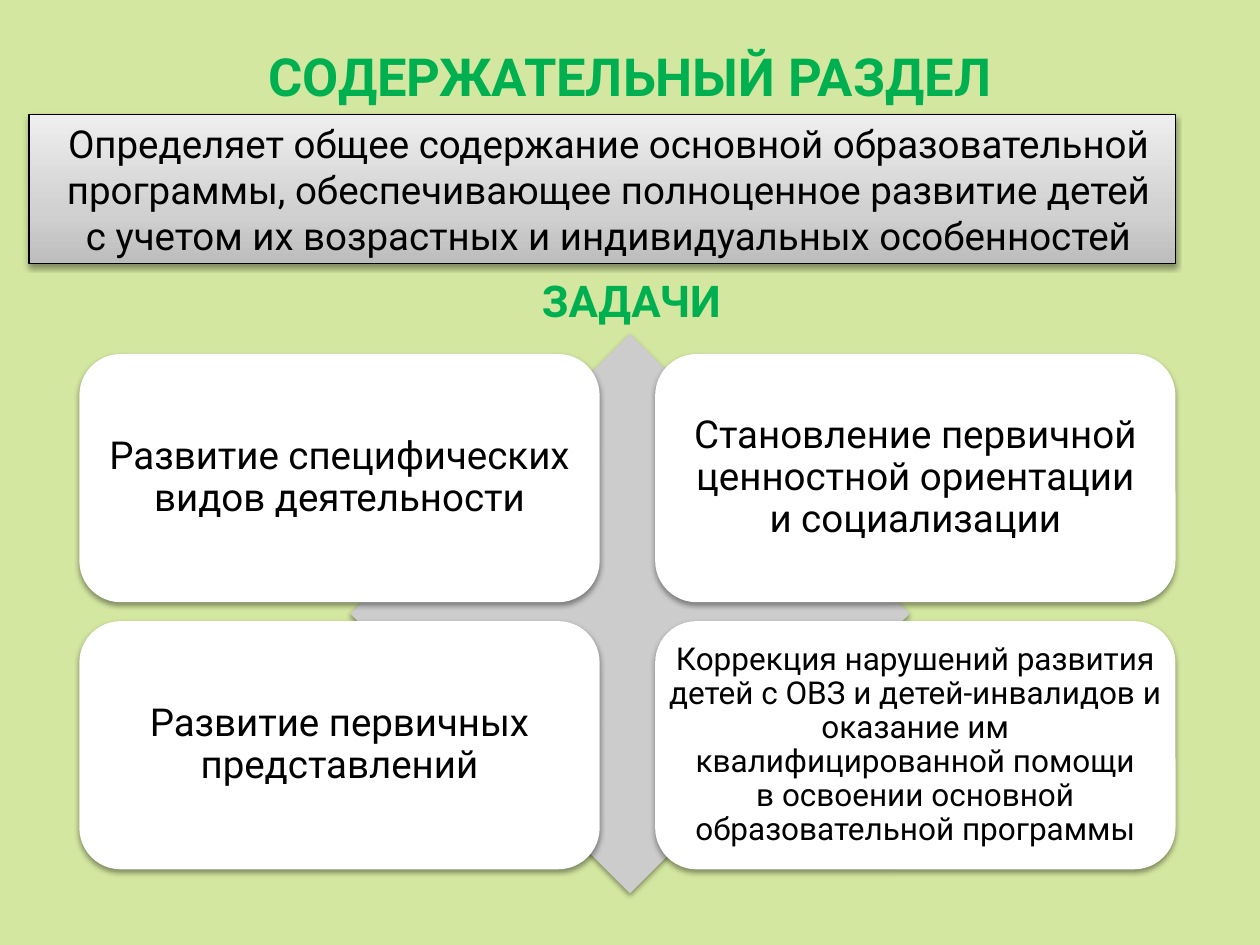
from lxml import etree
from pptx import Presentation
from pptx.dml.color import RGBColor
from pptx.enum import shapes, text
from pptx.oxml import parse_xml
from pptx.util import Inches, Pt

NS = 'xmlns:a="http://schemas.openxmlformats.org/drawingml/2006/main"'
FONT, GREEN, BLACK = "Roboto", "00B050", "000000"
SHAPE = shapes.MSO_SHAPE
ANCHOR = text.MSO_ANCHOR


def rgb(value):
    return RGBColor.from_string(value)


def write(sp, content, size, color=BLACK, bold=False, anchor=ANCHOR.MIDDLE,
          spacing=None, inset=None):
    """Put one centred paragraph into a shape; \\v breaks a line."""
    tf = sp.text_frame
    tf.word_wrap = True
    tf.auto_size = text.MSO_AUTO_SIZE.NONE
    tf.vertical_anchor = anchor
    if inset is not None:
        tf.margin_left = tf.margin_right = Inches(inset)
        tf.margin_top = tf.margin_bottom = Inches(inset)
    tf.text = content
    p = tf.paragraphs[0]
    p.alignment = text.PP_ALIGN.CENTER
    if spacing:
        p.line_spacing = spacing
    for r in p.runs:
        r.font.name, r.font.size, r.font.bold = FONT, Pt(size), bold
        r.font.color.rgb = rgb(color)
    return p


def add_shadow(sp):
    sp.shadow.inherit = False
    effects = sp._element.spPr.find("{*}effectLst")
    effects.append(parse_xml(
        f'<a:outerShdw {NS} blurRad="{Pt(3.1)}" dist="{Pt(1.6)}" dir="5400000" '
        'algn="ctr" rotWithShape="0"><a:srgbClr val="000000">'
        '<a:alpha val="38000"/></a:srgbClr></a:outerShdw>'))


def add_block(s, kind, x, y, w, h, fill):
    sp = s.shapes.add_shape(kind, Inches(x), Inches(y), Inches(w), Inches(h))
    sp.fill.solid()
    sp.fill.fore_color.rgb = rgb(fill)
    sp.line.fill.background()
    add_shadow(sp)
    return sp


def set_gradient(sp, stops, angle):
    """Fill with (position in percent, colour) stops."""
    sp.fill.gradient()
    sp.fill.gradient_angle = angle
    gs_list = sp._element.spPr.find("{*}gradFill/{*}gsLst")
    for gs in list(gs_list):
        gs_list.remove(gs)
    for pos, color in stops:
        gs = etree.SubElement(gs_list, gs_list.tag.replace("gsLst", "gs"),
                              pos=str(pos * 1000))
        gs.append(parse_xml(f'<a:srgbClr {NS} val="{color}"/>'))


def add_title(s):
    sp = s.shapes.title
    sp.left, sp.top = Inches(0.5), Inches(0.3)
    sp.width, sp.height = Inches(9), Inches(0.77)
    write(sp, "СОДЕРЖАТЕЛЬНЫЙ РАЗДЕЛ", 30, GREEN, True, ANCHOR.TOP)


def add_banner(s):
    sp = add_block(s, SHAPE.FLOWCHART_PROCESS, 0.23, 0.91, 9.1, 1.18, "D1D1D1")
    set_gradient(sp, [(0, "BDBDBD"), (35, "D1D1D1"), (100, "EEEEEE")], 90)
    sp.line.color.rgb = rgb(BLACK)
    sp.line.width = Pt(0.75)
    p = write(sp, "Определяет общее содержание основной образовательной программы, "
                  "обеспечивающее полноценное развитие детей\v"
                  "с учетом их возрастных и индивидуальных особенностей", 22)
    p._p.get_or_add_pPr().set("marL", str(Inches(0.1)))


def add_heading(s):
    sp = s.shapes.add_textbox(Inches(3.59), Inches(2.12), Inches(2.84), Inches(0.52))
    write(sp, "ЗАДАЧИ", 25, GREEN, True, ANCHOR.TOP)


def add_task_matrix(s):
    add_block(s, SHAPE.DIAMOND, 2.78, 2.65, 4.44, 4.44, "CCCCCC")
    tasks = [
        ("Развитие специфических видов деятельности", 22),
        ("Становление первичной ценностной ориентации\vи социализации", 22),
        ("Развитие первичных представлений", 22),
        ("Коррекция нарушений развития детей с ОВЗ и детей-инвалидов и оказание им "
         "квалифицированной помощи\vв освоении основной образовательной программы", 18),
    ]
    for i, (task, size) in enumerate(tasks):
        row, col = divmod(i, 2)
        sp = add_block(s, SHAPE.ROUNDED_RECTANGLE, 0.63 + 4.57 * col,
                       2.81 + 2.12 * row, 4.13, 1.97, "FFFFFF")
        write(sp, task, size, spacing=0.9, inset=0)


def main():
    prs = Presentation()
    prs.slide_width, prs.slide_height = Inches(10), Inches(7.5)
    s = prs.slides.add_slide(prs.slide_layouts[5])  # Title Only
    s.background.fill.solid()
    s.background.fill.fore_color.rgb = rgb("D4E7A0")
    add_title(s)
    add_banner(s)
    add_heading(s)
    add_task_matrix(s)
    prs.save("out.pptx")


if __name__ == "__main__":
    main()
